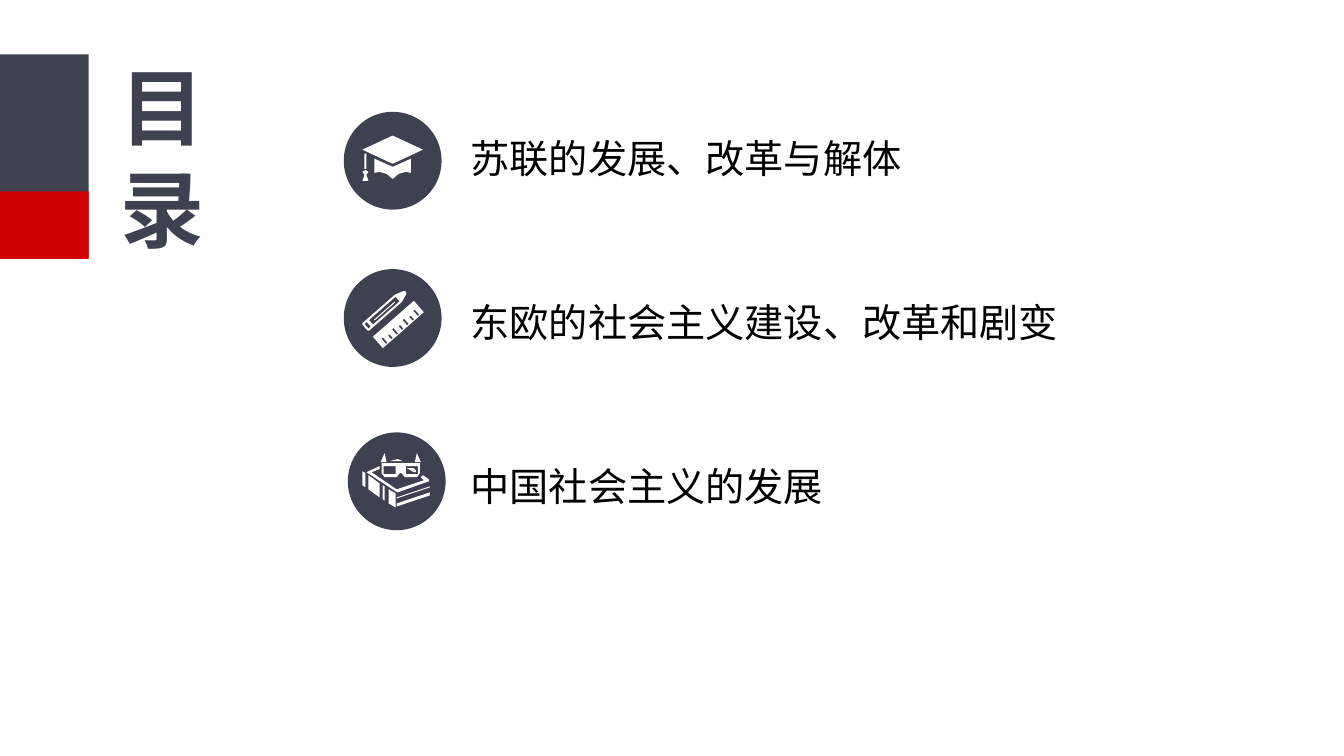
from lxml import etree
from pptx import Presentation
from pptx.dml.color import RGBColor
from pptx.enum.shapes import MSO_SHAPE as SHAPE
from pptx.enum.text import MSO_ANCHOR as ANCHOR, MSO_AUTO_SIZE as AUTO, PP_ALIGN as ALIGN
from pptx.oxml.ns import qn
from pptx.util import Inches, Pt

SLATE = RGBColor(0x3E, 0x41, 0x50)
RED = RGBColor(0xCF, 0x01, 0x01)
WHITE = RGBColor(0xFF, 0xFF, 0xFF)
BLACK = RGBColor(0x00, 0x00, 0x00)
TITLE_FONT = "Noto Sans CJK SC"
BODY_FONT = "Noto Sans CJK JP"
DISC = 0.97
ICON_UNIT = Inches(0.01)


def box(left, top, right, bottom):
    return [(left, top), (right, top), (right, bottom), (left, bottom)]


def mirror(half, axis=0):
    return half + [(2 * axis - x, y) for x, y in reversed(half)]


board = mirror([(0, -25), (30, -11), (0, 3)])
cap_body = mirror([(0, 6), (18, -2), (18, 12), (13, 11), (6, 13), (0, 18)])
cord = box(-28, -7, -26, 8)
tassel = mirror([(-27, 9), (-24, 11), (-26, 14), (-24, 20)], axis=-27)
cap = [board, cap_body, cord, tassel]

pencil = mirror([(-11, -27), (-9, -26), (-6, -17), (-6, 26), (-7, 27)], axis=-11)
pencil_holes = [box(-14, -16, -8, 19), box(-14, 22, -8, 25)]
pencil_core = box(-11, -12, -10, 15)
ruler = box(1, -27, 16, 27)
ticks = []
for i in range(7):
    y = -21 + 7 * i
    ticks.append(box(8 if i % 2 == 0 else 10, y - 1, 15, y + 1))
pencil_and_ruler = [pencil, *pencil_holes, pencil_core, ruler, *ticks]

nose = 4
frame = mirror([(nose, -18), (23, -18), (23, -8), (20, -4), (8, -4), (5, -8)], axis=nose)
glint = [(10, -13), (17, -13), (19, -11), (19, -9), (17, -9)]
bridge = [(-7, -20), (1, -22), (6, -20)]
cover = [(-30, -9), (-17, -15), (-17, -12), (-25, -9), (0, 8), (27, -1),
         (24, -4), (26, -6), (32, -2), (32, 0), (1, 11), (-1, 10)]
book_and_glasses = [frame, glint, bridge, cover]
for side in (-1, 1):
    lens = box(5, -15, 17, -7)
    temple = [(14, -19), (16, -28), (20, -19)]
    for part in (lens, temple):
        book_and_glasses.append([(nose + side * x, y) for x, y in part])
for y, thick in [(16, 1), (22, 3)]:
    book_and_glasses.append([(0, y), (33, y - 11), (33, y - 11 + thick), (0, y + thick)])
for left, right in [(-34, -31), (-28, -17), (-14, -12), (-8, -1)]:
    y1, y2 = [round(13 + x * 2 / 3) for x in (left, right)]
    book_and_glasses.append([(left, y1), (right, y2), (right, y2 + 14), (left, y1 + 14)])

ICONS = [
    (3.41, 1.11, cap, 0),
    (3.41, 2.67, pencil_and_ruler, 48.8),
    (3.45, 4.29, book_and_glasses, 0),
]
TEXTS = [
    ("目录", 1.1, 0.49, 0.68, 2.12, 60, TITLE_FONT, SLATE, Pt(73)),
    ("苏联的发展、改革与解体", 4.57, 1.11, 6.72, 0.97, 28, BODY_FONT, BLACK, 0.9),
    ("东欧的社会主义建设、改革和剧变", 4.57, 2.78, 6.09, 0.82, 28, BODY_FONT, BLACK, None),
    ("中国社会主义的发展", 4.57, 4.29, 6.29, 1.05, 28, BODY_FONT, BLACK, None),
]

prs = Presentation()
prs.slide_width = Inches(13.33)
prs.slide_height = Inches(7.5)
s = prs.slides.add_slide(prs.slide_layouts[6])

painted = []
for y, h, color in [(0.54, 2.02, SLATE), (1.9, 0.67, RED)]:
    bar = s.shapes.add_shape(SHAPE.RECTANGLE, 0, Inches(y), Inches(0.88), Inches(h))
    painted.append((bar, color))

for x, y, outlines, angle in ICONS:
    disc = s.shapes.add_shape(SHAPE.OVAL, Inches(x), Inches(y), Inches(DISC), Inches(DISC))
    first, *others = outlines
    fb = s.shapes.build_freeform(*first[0], scale=ICON_UNIT)
    fb.add_line_segments(first[1:], close=True)
    for outline in others:
        fb.move_to(*outline[0])
        fb.add_line_segments(outline[1:], close=True)
    icon = fb.convert_to_shape(Inches(x + DISC / 2), Inches(y + DISC / 2))
    icon.rotation = angle
    painted += [(disc, SLATE), (icon, WHITE)]

for sp, color in painted:
    sp.shadow.inherit = False
    sp.fill.solid()
    sp.fill.fore_color.rgb = color
    sp.line.fill.background()

for text, x, y, w, h, size, font, color, spacing in TEXTS:
    tb = s.shapes.add_textbox(Inches(x), Inches(y), Inches(w), Inches(h))
    tf = tb.text_frame
    tf.word_wrap = True
    tf.vertical_anchor = ANCHOR.MIDDLE
    p = tf.paragraphs[0]
    p.text = text
    p.line_spacing = spacing
    r = p.runs[0]
    r.font.size = Pt(size)
    r.font.color.rgb = color
    r.font.name = font
    etree.SubElement(r._r.get_or_add_rPr(), qn("a:ea")).set("typeface", font)
    if font == TITLE_FONT:
        tf.auto_size = AUTO.SHAPE_TO_FIT_TEXT
        p.alignment = ALIGN.RIGHT
        r.font.bold = True

prs.save("out.pptx")
